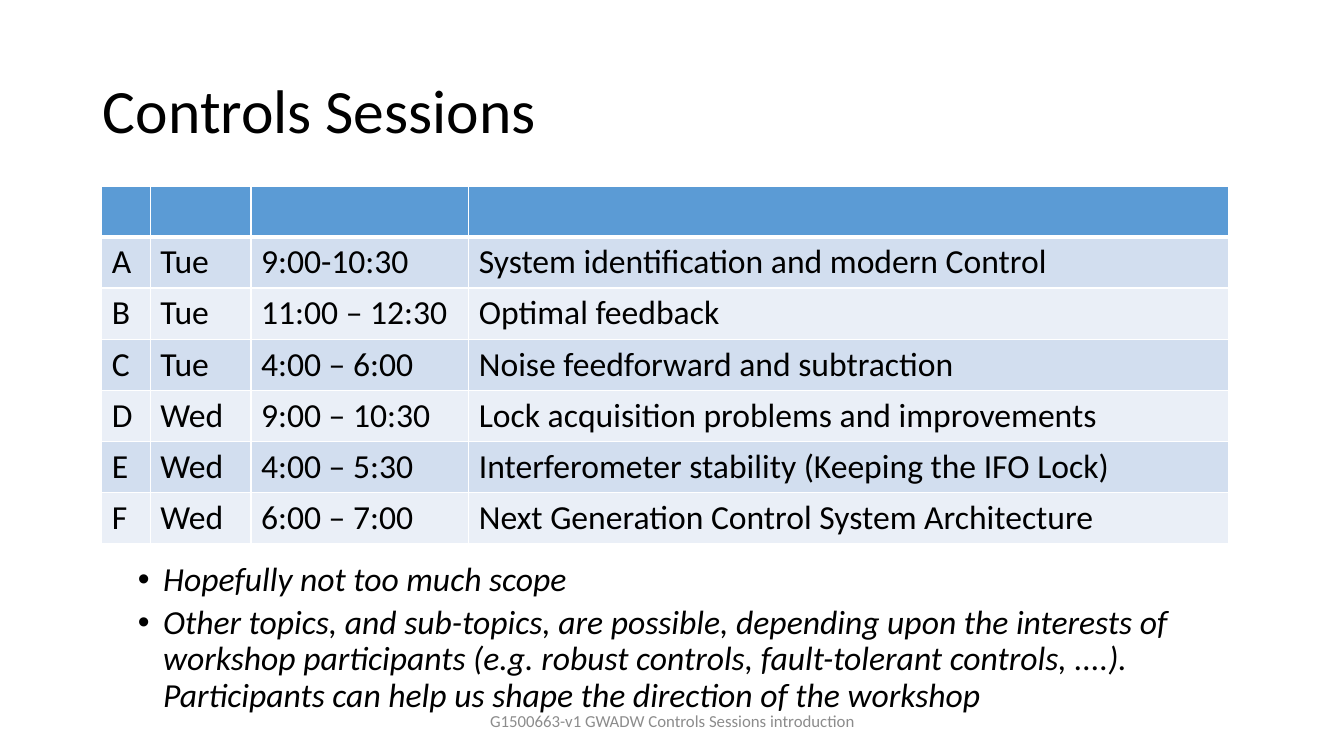
from typing import NamedTuple

from lxml import etree
from pptx import Presentation
from pptx.dml.color import RGBColor
from pptx.enum import text
from pptx.oxml import ns
from pptx.util import Inches, Pt

BLACK = RGBColor(0x00, 0x00, 0x00)
GREY = RGBColor(0x8C, 0x8C, 0x8C)
WHITE = RGBColor(0xFF, 0xFF, 0xFF)
HEADER_BLUE = RGBColor(0x5B, 0x9B, 0xD5)
BANDS = (RGBColor(0xEA, 0xEF, 0xF7), RGBColor(0xD2, 0xDE, 0xEF))
FONT = "Calibri"
COLUMN_WIDTHS = (0.48, 1, 2.16, 7.54)
ROW_HEIGHT = 0.5


class Session(NamedTuple):
    label: str
    day: str
    time: str
    topic: str


SESSIONS = (
    Session("A", "Tue", "9:00-10:30", "System identification and modern Control"),
    Session("B", "Tue", "11:00 – 12:30", "Optimal feedback"),
    Session("C", "Tue", "4:00 – 6:00", "Noise feedforward and subtraction"),
    Session("D", "Wed", "9:00 – 10:30", "Lock acquisition problems and improvements"),
    Session("E", "Wed", "4:00 – 5:30", "Interferometer stability (Keeping the IFO Lock)"),
    Session("F", "Wed", "6:00 – 7:00", "Next Generation Control System Architecture"),
)
REMARKS = (
    "Hopefully not too much scope",
    "Other topics, and sub-topics, are possible, depending upon the interests of "
    "workshop participants (e.g. robust controls, fault-tolerant controls, ....). "
    "Participants can help us shape the direction of the workshop",
)


def set_font(para, size: float, color: RGBColor = BLACK, italic: bool = False) -> None:
    font = para.font
    font.name, font.size, font.italic = FONT, Pt(size), italic
    font.color.rgb = color


def add_bullet(para) -> None:
    properties = para._p.get_or_add_pPr()
    properties.set("marL", str(Inches(0.75)))
    properties.set("indent", str(Inches(-0.25)))
    etree.SubElement(properties, ns.qn("a:buFont"), typeface="Arial")
    etree.SubElement(properties, ns.qn("a:buChar"), char="•")


def add_borders(cell, bottom: float, top: float) -> None:
    """Give the cell white borders; call before setting its fill."""
    properties = cell._tc.get_or_add_tcPr()
    for side, width in (("L", 1), ("R", 1), ("T", top), ("B", bottom)):
        line = etree.SubElement(properties, ns.qn(f"a:ln{side}"), w=str(Pt(width)))
        fill = etree.SubElement(line, ns.qn("a:solidFill"))
        etree.SubElement(fill, ns.qn("a:srgbClr"), val=str(WHITE))


def add_title(page) -> None:
    title = page.shapes.title
    title.left, title.top = Inches(0.92), Inches(0.4)
    title.width, title.height = Inches(11.5), Inches(1.45)
    title.text_frame.text = "Controls Sessions"
    title.text_frame.vertical_anchor = text.MSO_ANCHOR.MIDDLE
    para = title.text_frame.paragraphs[0]
    para.alignment = text.PP_ALIGN.LEFT
    para.line_spacing = 0.9
    set_font(para, 44)


def add_schedule(page) -> None:
    rows = (Session("", "", "", ""), *SESSIONS)
    table = page.shapes.add_table(
        len(rows), len(COLUMN_WIDTHS), Inches(1.01), Inches(1.85),
        Inches(sum(COLUMN_WIDTHS)), Inches(ROW_HEIGHT * len(rows)),
    ).table
    for column, width in zip(table.columns, COLUMN_WIDTHS):
        column.width = Inches(width)
    for index, session in enumerate(rows):
        for cell, value in zip(table.rows[index].cells, session):
            add_borders(cell, bottom=3 if index == 0 else 1, top=3 if index == 1 else 1)
            cell.fill.solid()
            cell.fill.fore_color.rgb = BANDS[index % 2] if index else HEADER_BLUE
            if value:
                cell.text = value
                set_font(cell.text_frame.paragraphs[0], 24)


def add_text_box(page, left: float, top: float, width: float, height: float):
    box = page.shapes.add_textbox(Inches(left), Inches(top), Inches(width), Inches(height))
    box.text_frame.word_wrap = True
    return box.text_frame


def add_remarks(page) -> None:
    frame = add_text_box(page, 0.77, 5.53, 11.5, 1.68)
    frame.text = "\n".join(REMARKS)
    for para in frame.paragraphs:
        para.level = 1
        add_bullet(para)
        para.line_spacing = 0.9
        para.space_before = Pt(5)
        set_font(para, 24, italic=True)


def add_footer(page) -> None:
    frame = add_text_box(page, 4.42, 6.95, 4.5, 0.4)
    frame.text = "G1500663-v1 GWADW Controls Sessions introduction"
    frame.vertical_anchor = text.MSO_ANCHOR.MIDDLE
    para = frame.paragraphs[0]
    para.alignment = text.PP_ALIGN.CENTER
    set_font(para, 12, GREY)


def main() -> None:
    deck = Presentation()
    deck.slide_width, deck.slide_height = Inches(13.33), Inches(7.5)
    page = deck.slides.add_slide(deck.slide_layouts.get_by_name("Title Only"))
    add_title(page)
    add_schedule(page)
    add_remarks(page)
    add_footer(page)
    deck.save("out.pptx")


if __name__ == "__main__":
    main()
